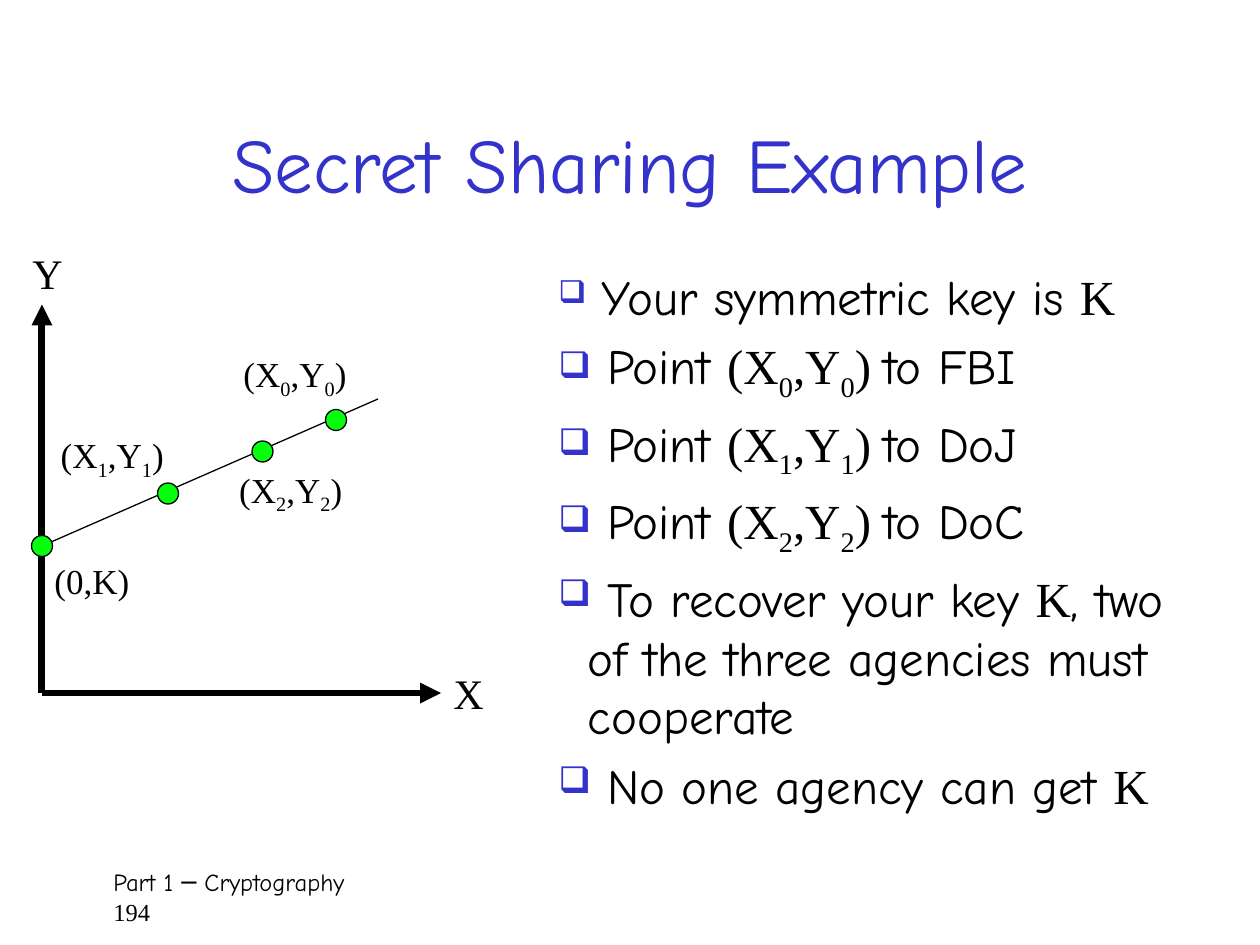
from dataclasses import dataclass

from lxml.etree import SubElement
from pptx import Presentation
from pptx.dml.color import RGBColor
from pptx.enum.shapes import MSO_CONNECTOR, MSO_SHAPE
from pptx.enum.text import MSO_ANCHOR, PP_ALIGN
from pptx.oxml.ns import qn
from pptx.util import Pt

EMU_PER_PX = 7620  # 120 px to the inch


@dataclass(frozen=True)
class Theme:
    ink: RGBColor = RGBColor(0, 0, 0)
    accent: RGBColor = RGBColor(0x33, 0x33, 0xCC)
    dot: RGBColor = RGBColor(0x06, 0xFF, 0x0E)
    sans: str = "Comic Neue"
    serif: str = "Times New Roman"
    title: int = 44
    body: int = 28
    axis: int = 24
    label: int = 20
    footer: int = 14


THEME = Theme()


def px(n):
    return int(n * EMU_PER_PX)


def add_run(p, text, size, font=THEME.serif, sub=False):
    r = p.add_run()
    r.text = text
    r.font.size = Pt(size)
    r.font.name = font
    r.font.color.rgb = THEME.ink
    if sub:
        r.font._element.set("baseline", "-25000")


def add_point(p, i, size, end=")"):
    """Write the coordinates (Xi,Yi) with subscript indices."""
    for text, sub in (("(X", False), (i, True), (",Y", False), (i, True), (end, False)):
        add_run(p, text, size, sub=sub)


def add_box(s, x, y, w, h, wrap=False):
    tf = s.shapes.add_textbox(px(x), px(y), px(w), px(h)).text_frame
    tf.word_wrap = wrap
    return tf


def add_line(s, start, end, width, arrow=False):
    line = s.shapes.add_connector(MSO_CONNECTOR.STRAIGHT, *map(px, start + end))
    line.line.color.rgb = THEME.ink
    line.line.width = Pt(width)
    if arrow:
        SubElement(line.line._get_or_add_ln(), qn("a:tailEnd"), type="triangle")
    SubElement(line._element.spPr, qn("a:effectLst"))


def add_dot(s, cx, cy, d=20):
    sp = s.shapes.add_shape(MSO_SHAPE.OVAL, px(cx - d // 2), px(cy - d // 2), px(d), px(d))
    sp.shadow.inherit = False
    sp.fill.solid()
    sp.fill.fore_color.rgb = THEME.dot
    sp.line.color.rgb = THEME.ink
    sp.line.width = Pt(0.75)


def add_bullet(tf, first=False):
    p = tf.paragraphs[0] if first else tf.add_paragraph()
    p.space_after = Pt(6)
    pPr = p._p.get_or_add_pPr()
    pPr.set("marL", str(px(28)))
    pPr.set("indent", str(-px(28)))
    color = SubElement(pPr, qn("a:buClr"))
    SubElement(color, qn("a:srgbClr"), val=str(THEME.accent))
    SubElement(pPr, qn("a:buSzPct"), val="75000")
    SubElement(pPr, qn("a:buChar"), char="❑")
    return p


def add_title(s, text):
    sp = s.shapes.title
    sp.left, sp.top, sp.width, sp.height = map(px, (90, 80, 1020, 150))
    tf = sp.text_frame
    tf.text = text
    tf.vertical_anchor = MSO_ANCHOR.MIDDLE
    p = tf.paragraphs[0]
    p.alignment = PP_ALIGN.CENTER
    font = p.runs[0].font
    font.size = Pt(THEME.title)
    font.name = THEME.sans
    font.color.rgb = THEME.accent


def add_graph(s):
    origin, key = (40, 660), (40, 520)
    add_line(s, origin, (420, 660), 4, arrow=True)
    add_line(s, origin, (40, 290), 4, arrow=True)
    add_line(s, key, (360, 380), 0.75)
    for center in (key, (160, 470), (250, 430), (320, 400)):
        add_dot(s, *center)

    for i, x, y in (("0", 220, 330), ("1", 46, 407), ("2", 216, 440)):
        add_point(add_box(s, x, y, 124, 52).paragraphs[0], i, THEME.label)
    add_run(add_box(s, 40, 527, 96, 52).paragraphs[0], "(0,K)", THEME.label)
    for name, x, y in (("X", 420, 630), ("Y", 19, 230)):
        add_run(add_box(s, x, y, 50, 60).paragraphs[0], name, THEME.axis)


def add_body(s):
    size, sans = THEME.body, THEME.sans
    tf = add_box(s, 520, 248, 610, 532, wrap=True)
    p = add_bullet(tf, first=True)
    add_run(p, " ", THEME.axis, sans)
    add_run(p, "Your symmetric key is ", size, sans)
    add_run(p, "K", size)
    for i, agency in enumerate(("FBI", "DoJ", "DoC")):
        p = add_bullet(tf)
        add_run(p, " Point ", size, sans)
        add_point(p, str(i), size, end=") ")
        add_run(p, f"to {agency}", size, sans)
    p = add_bullet(tf)
    add_run(p, " To recover your key ", size, sans)
    add_run(p, "K", size)
    add_run(p, ", two of the three agencies must cooperate", size, sans)
    p = add_bullet(tf)
    add_run(p, " No one agency can get ", size, sans)
    add_run(p, "K", size)


def add_footer(s, text, number):
    tf = add_box(s, 90, 820, 1030, 60, wrap=True)
    tf.margin_left = px(18)
    add_run(tf.paragraphs[0], text, THEME.footer, THEME.sans)
    add_run(tf.add_paragraph(), number, THEME.footer)


def main():
    prs = Presentation()
    prs.slide_width, prs.slide_height = px(1200), px(900)
    s = prs.slides.add_slide(prs.slide_layouts[5])
    add_title(s, "Secret Sharing Example")
    add_graph(s)
    add_body(s)
    add_footer(s, "Part 1 ─ Cryptography", "194")
    prs.save("out.pptx")


if __name__ == "__main__":
    main()
